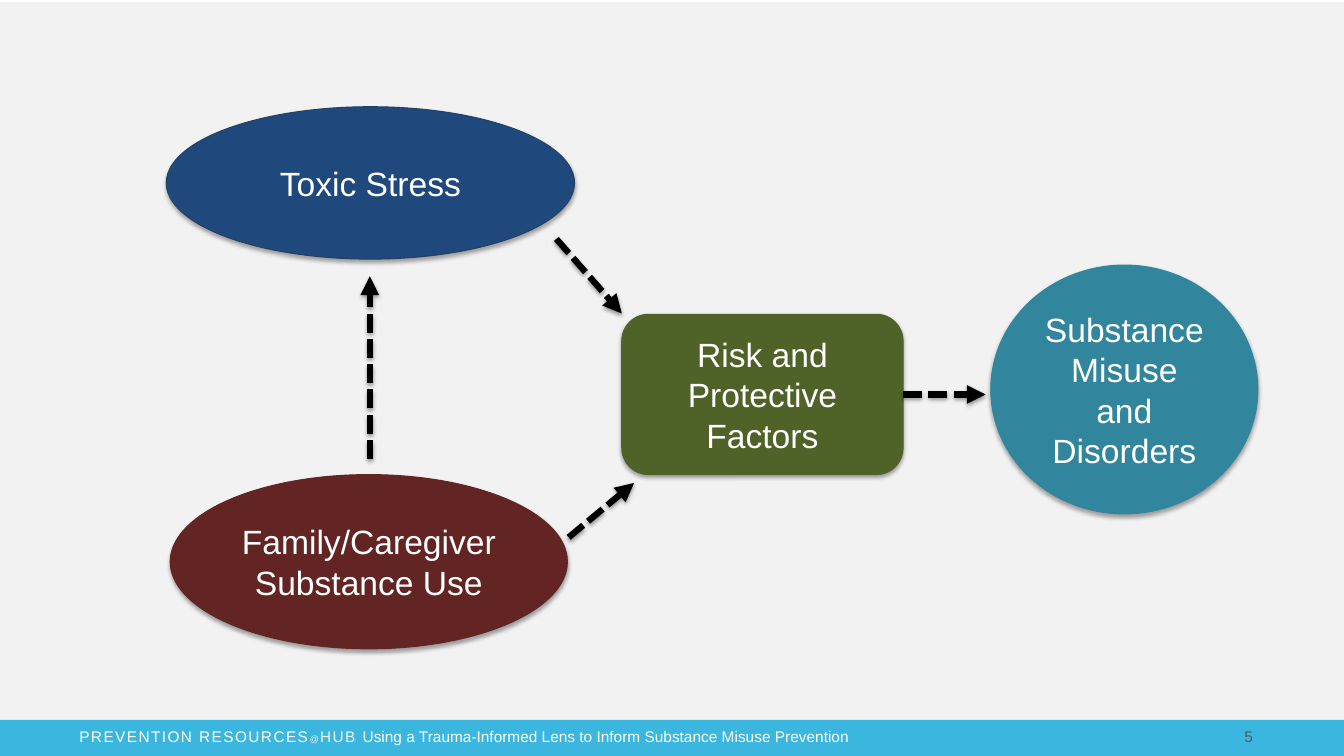
"""Build the slide on toxic stress, caregiver substance use and later misuse."""
from lxml import etree
from pptx import Presentation
from pptx import util as u
from pptx.dml.color import RGBColor
from pptx.enum import dml, shapes, text
from pptx.oxml import ns

HUES = {
    "back": "F2F2F2", "foot": "3AB6DF", "maroon": "632523", "navy": "1F497D",
    "edge": "254061", "teal": "31859C", "olive": "4F6228", "white": "FFFFFF",
    "gray": "595959", "black": "000000",
}
WIDE, HIGH, FOOT = 33.87, 19.05, 18.14
BARS = [("back", 0, 0.05, WIDE, FOOT - 0.05), ("foot", 0, FOOT, WIDE, HIGH - FOOT)]
OVAL, ROUND = shapes.MSO_SHAPE.OVAL, shapes.MSO_SHAPE.ROUNDED_RECTANGLE
NODES = [
    ("Family/Caregiver Substance Use", OVAL, "maroon", "maroon", 4.29, 11.96, 10.01, 4.39),
    ("Toxic Stress", OVAL, "navy", "edge", 4.19, 2.69, 10.29, 3.84),
    ("Substance Misuse and Disorders", OVAL, "teal", "teal", 24.97, 6.68, 6.73, 6.27),
    ("Risk and Protective Factors", ROUND, "olive", "olive", 15.67, 7.92, 7.09, 4.04),
]
ARROWS = [
    (14.33, 13.54, 15.98, 12.17),
    (22.76, 9.94, 24.84, 9.94),
    (14.02, 6.02, 15.67, 7.9),
    (9.32, 11.56, 9.32, 6.96),
]
RISK_ARROW = 1
FOOTER = [
    ("PREVENTION RESOURCES", "white", {"spc": "100"}),
    ("@", "back", {"spc": "100", "baseline": "6000"}),
    ("HUB ", "back", {"spc": "100"}),
    ("Using a Trauma-Informed Lens to Inform Substance Misuse Prevention \t", "white", {}),
    ("5", "gray", {}),
]
FOOT_BOX, FOOT_TAB = (1.75, 18.21, 30.18, 0.74), 29.36


def cms(nums):
    return [u.Cm(n) for n in nums]


def rgb(name):
    return RGBColor.from_string(HUES[name])


def add(dad, tag, **attrs):
    return etree.SubElement(dad, ns.qn(tag), attrs)


def paint(shape, fill, edge=None):
    shape.shadow.inherit = False
    shape.fill.solid()
    shape.fill.fore_color.rgb = rgb(fill)
    if edge:
        shape.line.color.rgb = rgb(edge)
        shape.line.width = u.Pt(0.75)
    else:
        shape.line.fill.background()


def shade(props, drop, alpha):
    glow = props.find(ns.qn("a:effectLst"))
    if glow is None:
        glow = add(props, "a:effectLst")
    cast = add(glow, "a:outerShdw", blurRad=str(u.Pt(3.1)), dist=str(u.Pt(drop)),
               dir="5400000", rotWithShape="0")
    tint = add(cast, "a:srgbClr", val=HUES["black"])
    add(tint, "a:alpha", val=str(alpha * 1000))


def write(para, words, hue, size):
    run = para.add_run()
    run.text = words
    for key, val in {"name": "Arial", "size": u.Pt(size)}.items():
        setattr(run.font, key, val)
    run.font.color.rgb = rgb(hue)
    return run


def add_node(draw, words, kind, fill, edge, *box):
    node = draw.add_shape(kind, *cms(box))
    paint(node, fill, edge)
    shade(node.element.spPr, 1.8, 35)
    frame = node.text_frame
    for key, val in {"word_wrap": True, "vertical_anchor": text.MSO_ANCHOR.MIDDLE}.items():
        setattr(frame, key, val)
    para = frame.paragraphs[0]
    para.alignment = text.PP_ALIGN.CENTER
    write(para, words, "white", 24)
    return node


def add_arrow(draw, ends):
    arrow = draw.add_connector(shapes.MSO_CONNECTOR.STRAIGHT, *cms(ends))
    arrow.line.color.rgb = rgb("black")
    for key, val in {"width": u.Pt(4.5), "dash_style": dml.MSO_LINE.SQUARE_DOT}.items():
        setattr(arrow.line, key, val)
    props = arrow.element.spPr
    add(props.find(ns.qn("a:ln")), "a:tailEnd", type="triangle")
    shade(props, 1.6, 38)
    return arrow


def add_footer(draw):
    frame = draw.add_textbox(*cms(FOOT_BOX)).text_frame
    frame.word_wrap = True
    para = frame.paragraphs[0]
    tabs = add(para._p.get_or_add_pPr(), "a:tabLst")
    add(tabs, "a:tab", pos=str(u.Cm(FOOT_TAB)), algn="l")
    for words, hue, attrs in FOOTER:
        run = write(para, words, hue, 11)
        for key, val in attrs.items():
            run.font._element.set(key, val) if hasattr(run.font, "_element") else run._r.get_or_add_rPr().set(key, val)


def main():
    deck = Presentation()
    deck.slide_width, deck.slide_height = cms((WIDE, HIGH))
    draw = deck.slides.add_slide(deck.slide_layouts[6]).shapes
    for hue, *box in BARS:
        paint(draw.add_shape(shapes.MSO_SHAPE.RECTANGLE, *cms(box)), hue)
    nodes = [add_node(draw, *node) for node in NODES]
    arrows = [add_arrow(draw, ends) for ends in ARROWS]
    arrows[RISK_ARROW].begin_connect(nodes[-1], 3)
    add_footer(draw)
    deck.save("out.pptx")


if __name__ == "__main__":
    main()
